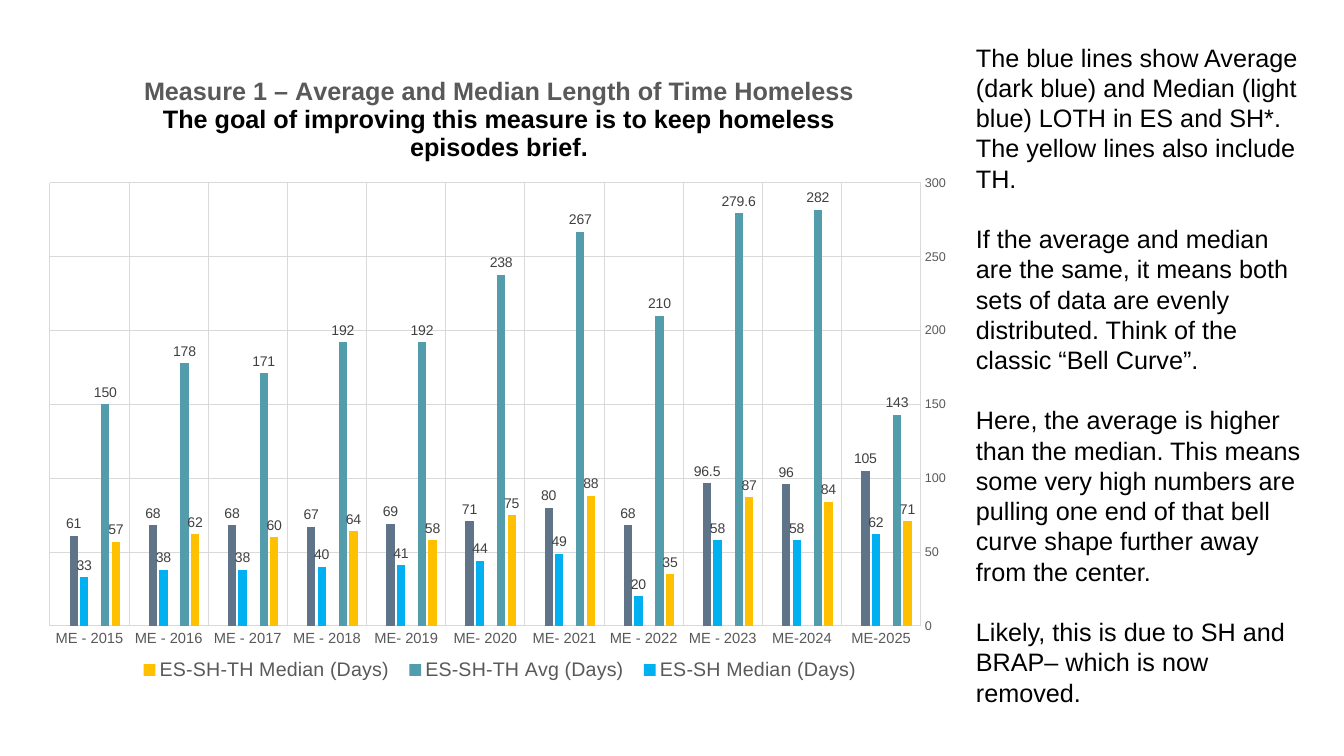
import dataclasses

import lxml.etree
import pptx
import pptx.chart.data
import pptx.dml.color
import pptx.enum.chart
import pptx.enum.text
import pptx.oxml.ns
import pptx.util

FACE = "Arial"
GREY, RULE, BLACK = "595959", "D9D9D9", "000000"
YEARS = ["ME-2025", "ME-2024", "ME - 2023", "ME - 2022", "ME- 2021", "ME- 2020",
         "ME- 2019", "ME - 2018", "ME - 2017", "ME - 2016", "ME - 2015"]
HEADS = [("Measure 1 – Average and Median Length of Time Homeless", GREY),
         ("The goal of improving this measure is to keep homeless episodes brief.", BLACK)]
NOTES = [
    "The blue lines show Average (dark blue) and Median (light blue) LOTH in ES and SH*. "
    "The yellow lines also include TH.",
    "If the average and median are the same, it means both sets of data are evenly "
    "distributed. Think of the classic “Bell Curve”.",
    "Here, the average is higher than the median. This means some very high numbers are "
    "pulling one end of that bell curve shape further away from the center.",
    "Likely, this is due to SH and BRAP– which is now removed.",
]


@dataclasses.dataclass
class Series:
    name: str
    color: str
    vals: list
    keyed: bool = True


@dataclasses.dataclass
class Box:
    left: int
    top: int
    width: int
    height: int

    def emu(self) -> list:
        return [px(n) for n in (self.left, self.top, self.width, self.height)]


BLANK = [None] * len(YEARS)
# Empty series leave a gap between the pairs of bars
SERIES = [
    Series("ES-SH-TH Median (Days)", "FFC000", [71, 84, 87, 35, 88, 75, 58, 64, 60, 62, 57]),
    Series("ES-SH-TH Avg (Days)", "539CAC",
           [143, 282, 279.6, 210, 267, 238, 192, 192, 171, 178, 150]),
    Series("Series 3", "F3C766", BLANK, False),
    Series("ES-SH Median (Days)", "00B0F0", [62, 58, 58, 20, 49, 44, 41, 40, 38, 38, 33]),
    Series("ES-SH Avg (Days)", "5F7389", [105, 96, 96.5, 68, 80, 71, 69, 67, 68, 68, 61], False),
    Series("Series 6", "B9CFBB", BLANK, False),
]
FRAME = Box(31, 49, 934, 648)
PLOT = Box(50, 183, 871, 443)
KEY = Box(130, 655, 740, 30)
HEAD = Box(141, 72, 0, 0)
SIDE = Box(966, 37, 350, 591)


def px(n: int) -> int:
    return round(n * 914400 / 100.8)


def rgb(code: str) -> pptx.dml.color.RGBColor:
    return pptx.dml.color.RGBColor.from_string(code)


def style(font, size: float, color: str, bold: bool = False) -> None:
    font.name, font.size, font.bold = FACE, pptx.util.Pt(size), bold
    font.color.rgb = rgb(color)


def node(owner, tag: str, **attrs: str):
    return lxml.etree.SubElement(owner, pptx.oxml.ns.qn(tag), **attrs)


def place(owner, index: int, box: Box, inner: bool = False) -> None:
    """Fix a chart part at a place given in slide px."""
    for old in owner.findall(pptx.oxml.ns.qn("c:layout")):
        owner.remove(old)
    layout = node(owner, "c:layout")
    manual = node(layout, "c:manualLayout")
    if inner:
        node(manual, "c:layoutTarget", val="inner")
    for axis in "xy":
        node(manual, f"c:{axis}Mode", val="edge")
    parts = {"x": (box.left - FRAME.left) / FRAME.width,
             "y": (box.top - FRAME.top) / FRAME.height}
    if box.width:
        parts.update(w=box.width / FRAME.width, h=box.height / FRAME.height)
    for key, part in parts.items():
        node(manual, f"c:{key}", val=f"{part:.4f}")
    owner.insert(index, layout)


def rule(line) -> None:
    line.color.rgb = rgb(RULE)
    line.width = pptx.util.Pt(0.75)


def set_axis(axis, size: float) -> None:
    axis.major_tick_mark = axis.minor_tick_mark = pptx.enum.chart.XL_TICK_MARK.NONE
    axis.has_major_gridlines = True
    rule(axis.major_gridlines.format.line)
    style(axis.tick_labels.font, size, GREY)


def add_bars(slide) -> None:
    data = pptx.chart.data.CategoryChartData()
    data.categories = YEARS
    for item in SERIES:
        data.add_series(item.name, item.vals)
    kind = pptx.enum.chart.XL_CHART_TYPE.COLUMN_CLUSTERED
    chart = slide.shapes.add_chart(kind, *FRAME.emu(), data).chart
    style(chart.font, 10, BLACK)

    # Bars and their values
    plot = chart.plots[0]
    plot.gap_width, plot.overlap, plot.vary_by_categories = 219, -27, False
    for item, bars in zip(SERIES, plot.series):
        bars.format.fill.solid()
        bars.format.fill.fore_color.rgb = rgb(item.color)
        if item.vals is not BLANK:
            labels = bars.data_labels
            labels.show_value = True
            labels.position = pptx.enum.chart.XL_LABEL_POSITION.OUTSIDE_END
            style(labels.font, 10, "404040")

    # Axes: years run right to left, so the scale stands at the right
    years, days = chart.category_axis, chart.value_axis
    set_axis(years, 10.5)
    years.reverse_order = True
    rule(years.format.line)
    set_axis(days, 9)
    days.minimum_scale, days.maximum_scale, days.major_unit = 0, 300, 50
    days.format.line.fill.background()
    area = chart._chartSpace.chart.plotArea
    place(area, 0, PLOT, inner=True)

    # Title
    chart.has_title = True
    frame = chart.chart_title.text_frame
    frame.text = "\n".join(text for text, _ in HEADS)
    for para, (_, color) in zip(frame.paragraphs, HEADS):
        style(para.runs[0].font, 18, color, bold=True)
    place(chart.chart_title._element, 1, HEAD)

    # Legend
    chart.has_legend = True
    legend = chart.legend
    legend.position = pptx.enum.chart.XL_LEGEND_POSITION.BOTTOM
    legend.include_in_layout = False
    style(legend.font, 14, GREY)
    hidden = [i for i, item in enumerate(SERIES) if not item.keyed]
    for spot, index in enumerate(hidden, 1):
        entry = node(legend._element, "c:legendEntry")
        node(entry, "c:idx", val=str(index))
        node(entry, "c:delete", val="1")
        legend._element.insert(spot, entry)
    place(legend._element, 1 + len(hidden), KEY)


def add_notes(slide) -> None:
    frame = slide.shapes.add_textbox(*SIDE.emu()).text_frame
    frame.word_wrap = True
    frame.auto_size = pptx.enum.text.MSO_AUTO_SIZE.SHAPE_TO_FIT_TEXT
    frame.text = "\n".join(NOTES)
    pitch = pptx.util.Pt(21.6)
    for index, para in enumerate(frame.paragraphs):
        para.line_spacing = pitch
        if index:
            para.space_before = pitch
        style(para.runs[0].font, 18, BLACK)


def main() -> None:
    deck = pptx.Presentation()
    deck.slide_width, deck.slide_height = px(1344), px(756)
    slide = deck.slides.add_slide(deck.slide_layouts[6])
    add_bars(slide)
    add_notes(slide)
    deck.save("out.pptx")


if __name__ == "__main__":
    main()
